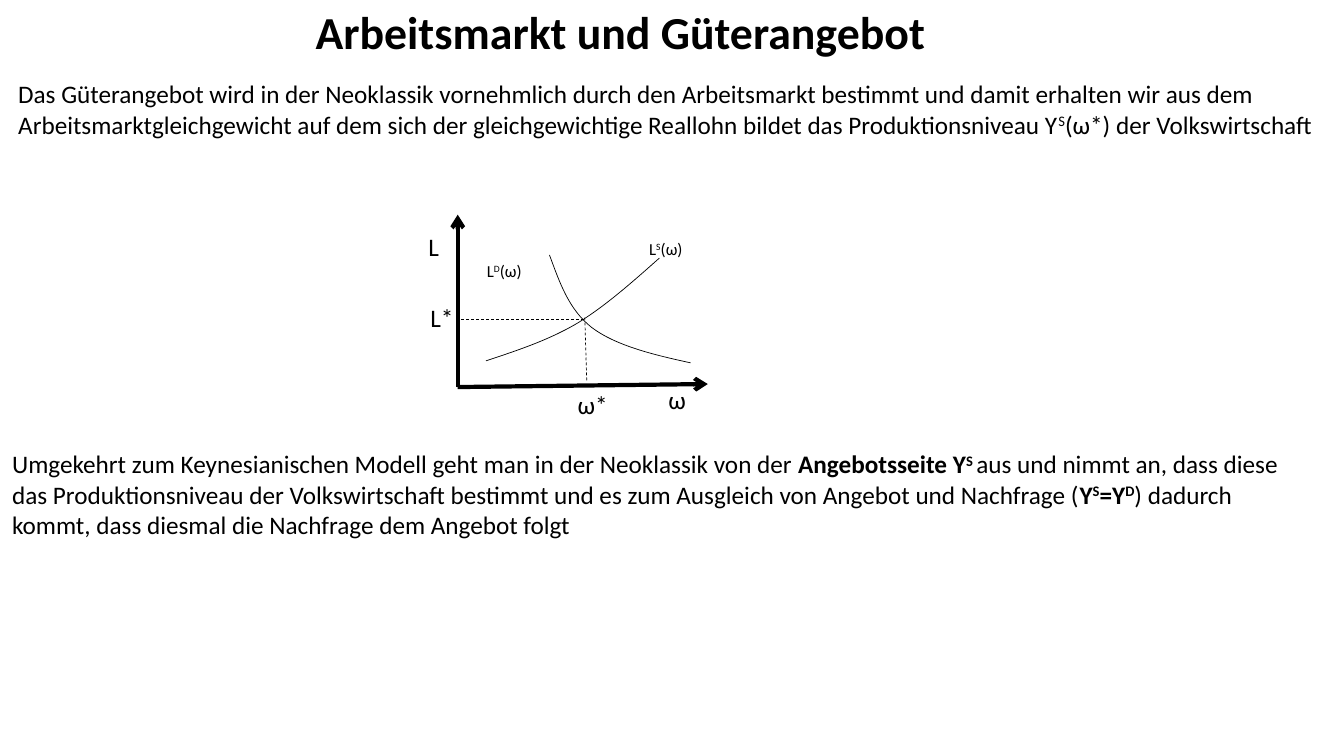
import pptx
import pptx.util
import pptx.dml.color
import pptx.enum.dml
import pptx.enum.shapes
import pptx.enum.text
import pptx.oxml
import pptx.oxml.ns

PX = 9144  # 100 px to the inch
COLOURS = {"ink": "000000", "paper": "FFFFFF"}
INK = pptx.dml.color.RGBColor.from_string(COLOURS["ink"])

deck = pptx.Presentation()
deck.slide_width, deck.slide_height = 1333 * PX, 750 * PX
page = deck.slides.add_slide(deck.slide_layouts[6])
page.background.fill.solid()
page.background.fill.fore_color.rgb = pptx.dml.color.RGBColor.from_string(COLOURS["paper"])


def add_text(left, top, width, height, size, runs, wrap=False, inset=(10, 5)):
    """Add a text box; a run's style may hold b for bold and ^ for superscript."""
    box = page.shapes.add_textbox(left * PX, top * PX, width * PX, height * PX)
    frame = box.text_frame
    frame.word_wrap = wrap
    frame.auto_size = pptx.enum.text.MSO_AUTO_SIZE.SHAPE_TO_FIT_TEXT
    frame.margin_left = frame.margin_right = inset[0] * PX
    frame.margin_top = frame.margin_bottom = inset[1] * PX
    para = frame.paragraphs[0]
    for text, style in runs:
        span = para.add_run()
        span.text = text
        span.font.name = "Calibri"
        span.font.size = pptx.util.Pt(size)
        span.font.bold = "b" in style
        span.font.color.rgb = INK
        if "^" in style:
            span.font._element.set("baseline", "30000")


def add_line(start, end, weight):
    line = page.shapes.add_connector(
        pptx.enum.shapes.MSO_CONNECTOR.STRAIGHT, *[value * PX for value in start + end])
    line.line.color.rgb = INK
    line.line.width = pptx.util.Pt(weight)
    pptx.oxml.ns.qn("a:effectLst")
    line._element.spPr.append(line._element.makeelement(pptx.oxml.ns.qn("a:effectLst"), {}))
    return line


# Title and introduction
BLOCK_INSET = (9, 4)
add_text(304, 0, 627, 65, 32.7, [("Arbeitsmarkt und Güterangebot", "b")], inset=BLOCK_INSET)
add_text(9, 74, 1309, 71, 18, [
    ("Das Güterangebot wird in der Neoklassik vornehmlich durch den Arbeitsmarkt bestimmt und "
     "damit erhalten wir aus dem Arbeitsmarktgleichgewicht auf dem sich der gleichgewichtige "
     "Reallohn bildet das Produktionsniveau Y", ""),
    ("S", "^"),
    ("(ω*) der Volkswirtschaft", ""),
], wrap=True, inset=BLOCK_INSET)

# Axes
origin = (454, 384)
for tip in [(702, 381), (454, 213)]:
    axis = add_line(origin, tip, 3)
    pptx.oxml.ns.qn("a:tailEnd")
    axis_line = axis.line._get_or_add_ln()
    axis_line.append(axis_line.makeelement(pptx.oxml.ns.qn("a:tailEnd"), {"type": "arrow"}))

# Supply and demand: a start point, then three Bézier points for each piece
supply = [(482, 358), (512, 348), (543, 338), (572, 321), (600, 304), (627, 280), (654, 256)]
demand = [(545, 253), (555, 280), (564, 307), (587, 325), (611, 343), (648, 352), (685, 360)]
for points in (supply, demand):
    builder = page.shapes.build_freeform(*points[0], scale=PX)
    builder.add_line_segments(points[1:], close=False)
    curve = builder.convert_to_shape()
    curve.shadow.inherit = False
    curve.fill.background()
    curve.line.color.rgb = INK
    curve.line.width = pptx.util.Pt(0.5)
    segments = list(curve._element.iter(pptx.oxml.ns.qn("a:lnTo")))
    outline = segments[0].getparent()
    for first in range(0, len(segments), 3):
        bezier = outline.makeelement(pptx.oxml.ns.qn("a:cubicBezTo"), {})
        outline.append(bezier)
        for segment in segments[first:first + 3]:
            bezier.append(segment[0])
            outline.remove(segment)

# Guides from the equilibrium to both axes
for start, end in [((580, 315), (582, 379)), ((579, 317), (454, 317))]:
    guide = add_line(start, end, 0.5)
    guide.line.dash_style = pptx.enum.dml.MSO_LINE.DASH

# Labels of the diagram
for left, top, width, text in [
    (415, 225, 31, "L"), (653, 376, 38, "ω"), (417, 295, 44, "L*"), (563, 381, 52, "ω*"),
]:
    add_text(left, top, width, 40, 18, [(text, "")])
for left, top, width, side in [(473, 254, 57, "D"), (634, 232, 54, "S")]:
    add_text(left, top, width, 30, 12, [("L", ""), (side, "^"), ("(ω)", "")])

# Conclusion
add_text(3, 441, 1309, 101, 18, [
    ("Umgekehrt zum Keynesianischen Modell geht man in der Neoklassik von der ", ""),
    ("Angebotsseite Y", "b"),
    ("S ", "b^"),
    ("aus und nimmt an, dass diese das Produktionsniveau der Volkswirtschaft bestimmt und es "
     "zum Ausgleich von Angebot und Nachfrage (", ""),
    ("Y", "b"),
    ("S", "b^"),
    ("=Y", "b"),
    ("D", "b^"),
    (") dadurch kommt, dass diesmal die Nachfrage dem Angebot folgt", ""),
], wrap=True, inset=BLOCK_INSET)

deck.save("out.pptx")
